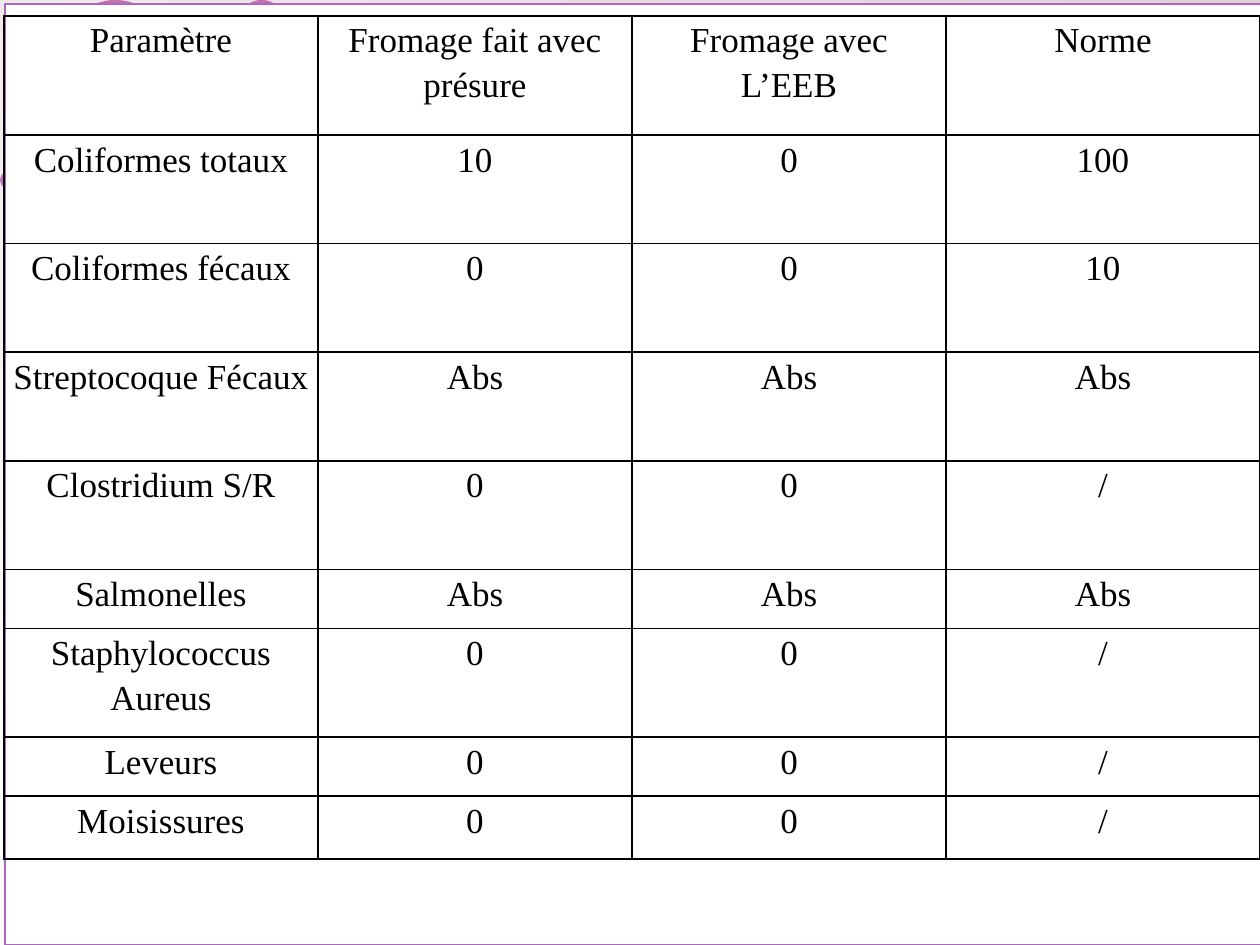
from lxml import etree
from pptx import Presentation
from pptx.dml.color import RGBColor
from pptx.enum.shapes import MSO_SHAPE
from pptx.enum.text import PP_ALIGN
from pptx.oxml import parse_xml
from pptx.oxml.ns import nsdecls, qn
from pptx.util import Cm, Pt

OVAL, RECTANGLE = MSO_SHAPE.OVAL, MSO_SHAPE.RECTANGLE
CENTER = PP_ALIGN.CENTER

BLACK = RGBColor(0x00, 0x00, 0x00)
WHITE = RGBColor(0xFF, 0xFF, 0xFF)
ROSE = RGBColor(0xDF, 0xD0, 0xD7)
MAGENTA = RGBColor(0xB1, 0x3F, 0x9A)
VIOLET = RGBColor(0xAC, 0x66, 0xBB)

RESULTS = [
    ("Paramètre", "Fromage fait avec présure", "Fromage avec L’EEB", "Norme"),
    ("Coliformes totaux", "10", "0", "100"),
    ("Coliformes fécaux", "0", "0", "10"),
    ("Streptocoque Fécaux", "Abs", "Abs", "Abs"),
    ("Clostridium S/R", "0", "0", "/"),
    ("Salmonelles", "Abs", "Abs", "Abs"),
    ("Staphylococcus Aureus", "0", "0", "/"),
    ("Leveurs", "0", "0", "/"),
    ("Moisissures", "0", "0", "/"),
]
ROW_HEIGHTS = [2.4, 2.19, 2.19, 2.19, 2.19, 1.19, 2.19, 1.19, 1.27]
COLUMN_WIDTH = 6.33
BUBBLES = [(1.27, 0, 2.11), (4.78, 0, 0.99), (0, 3.45, 0.36)]

CELL_FORMAT = {"margin_left": Cm(0.17), "margin_right": Cm(0.17),
               "margin_top": 0, "margin_bottom": 0}
PARAGRAPH_FORMAT = {"alignment": CENTER, "line_spacing": 1.15}
FONT_FORMAT = {"name": "Times New Roman", "size": Pt(20), "bold": False}


def apply_format(target, values):
    for key, value in values.items():
        setattr(target, key, value)


def add_panel(slide, kind, left, top, width, height, color):
    panel = slide.shapes.add_shape(kind, Cm(left), Cm(top), Cm(width), Cm(height))
    panel.shadow.inherit = False
    panel.fill.solid()
    panel.fill.fore_color.rgb = color
    panel.line.fill.background()
    return panel


def add_borders(cell):
    properties = cell._tc.get_or_add_tcPr()
    for side in ("lnL", "lnR", "lnT", "lnB"):
        properties.append(parse_xml(
            f'<a:{side} {nsdecls("a")} w="{Pt(1)}"><a:solidFill>'
            f'<a:srgbClr val="{BLACK}"/></a:solidFill></a:{side}>'))


def fill_cell(cell, text):
    cell.text = text
    apply_format(cell, CELL_FORMAT)
    add_borders(cell)
    cell.fill.background()
    paragraph = cell.text_frame.paragraphs[0]
    apply_format(paragraph, PARAGRAPH_FORMAT)
    font = paragraph.runs[0].font
    apply_format(font, FONT_FORMAT)
    font.color.rgb = BLACK


def main():
    deck = Presentation()
    deck.slide_width, deck.slide_height = Cm(25.4), Cm(19.05)
    slide = deck.slides.add_slide(deck.slide_layouts[6])

    backdrop = slide.background.fill
    backdrop.gradient()
    backdrop.gradient_angle = 230
    for stop, color in zip(backdrop.gradient_stops, (ROSE, WHITE)):
        stop.color.rgb = color

    for left, top, size in BUBBLES:
        bubble = add_panel(slide, OVAL, left, top, size, size, MAGENTA)
        tint = bubble._element.spPr.find(".//" + qn("a:srgbClr"))
        etree.SubElement(tint, qn("a:alpha"), val="70000")

    frame = add_panel(slide, RECTANGLE, 0.1, 0.08, 25.4, 18.97, WHITE)
    frame.line.color.rgb = VIOLET
    frame.line.width = Pt(1.5)

    columns = len(RESULTS[0])
    table = slide.shapes.add_table(
        len(RESULTS), columns, Cm(0.08), Cm(0.32),
        Cm(COLUMN_WIDTH * columns), Cm(sum(ROW_HEIGHTS))).table
    for column in table.columns:
        column.width = Cm(COLUMN_WIDTH)
    for row, height, texts in zip(table.rows, ROW_HEIGHTS, RESULTS):
        row.height = Cm(height)
        for cell, text in zip(row.cells, texts):
            fill_cell(cell, text)

    deck.save("out.pptx")


if __name__ == "__main__":
    main()
